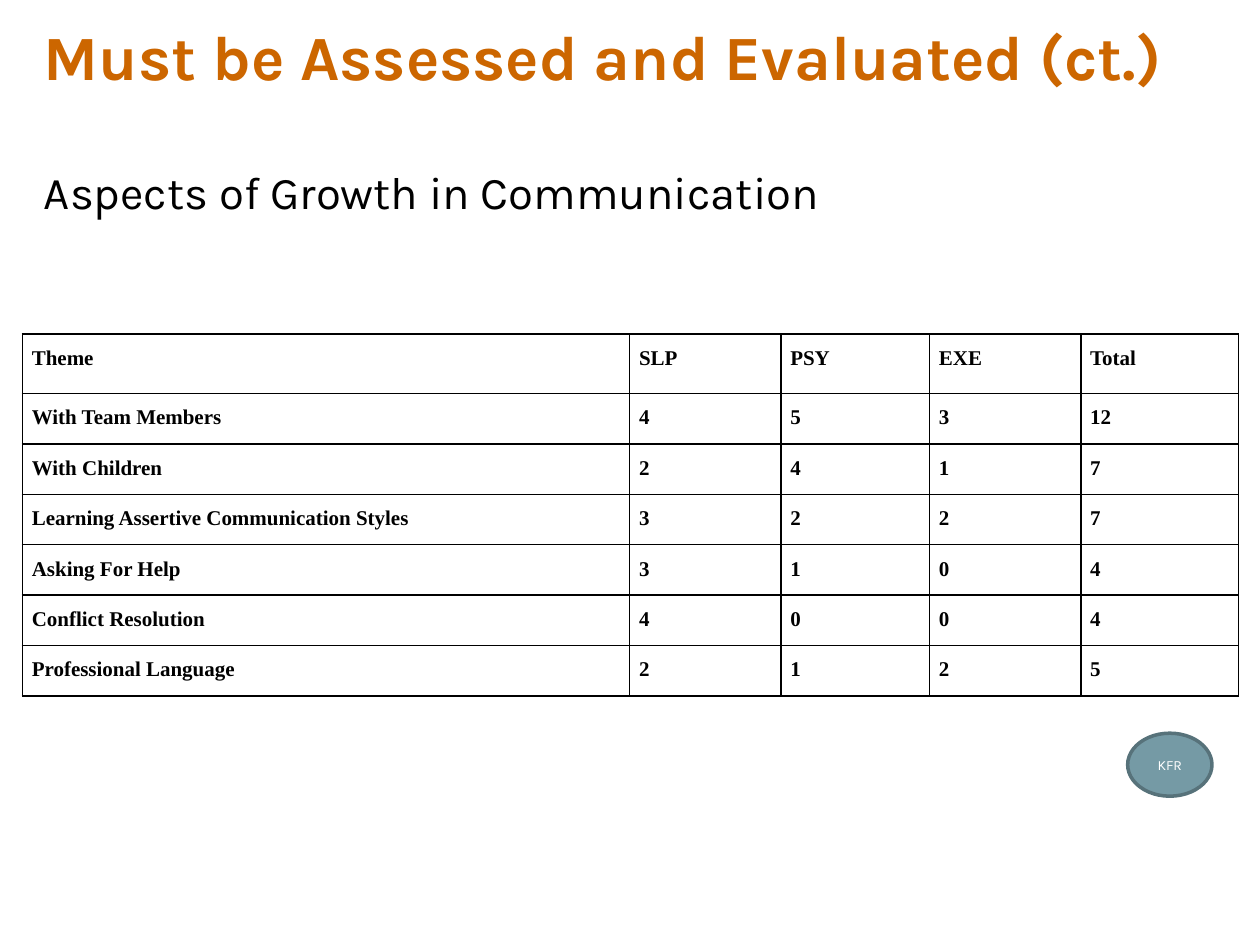
import pptx
import pptx.dml.color
import pptx.enum.shapes
import pptx.enum.text
import pptx.oxml
import pptx.oxml.ns
import pptx.util

Pt = pptx.util.Pt

COLORS = {
    "title": "CC6600",
    "text": "000000",
    "border": "000000",
    "badge": "759AA5",
    "badge_line": "57727A",
    "badge_text": "FFFFFF",
}

COLUMN_WIDTHS = [347, 86.4, 85, 86.4, 90]
HEADER_HEIGHT = 34
ROW_HEIGHT = 27.6

THEMES = [
    ("Theme", "SLP", "PSY", "EXE", "Total"),
    ("With Team Members", 4, 5, 3, 12),
    ("With Children", 2, 4, 1, 7),
    ("Learning Assertive Communication Styles", 3, 2, 2, 7),
    ("Asking For Help", 3, 1, 0, 4),
    ("Conflict Resolution", 4, 0, 0, 4),
    ("Professional Language", 2, 1, 2, 5),
]


def rgb(name):
    return pptx.dml.color.RGBColor.from_string(COLORS[name])


def write(frame, text, size, color, font="Karla", bold=False):
    frame.text = text
    for run in frame.paragraphs[0].runs:
        run.font.name = font
        run.font.size = Pt(size)
        run.font.bold = bold
        run.font.color.rgb = rgb(color)


def add_text(slide, text, left, top, width, height, size, color, inset, bold=False):
    frame = slide.shapes.add_textbox(Pt(left), Pt(top), Pt(width), Pt(height)).text_frame
    frame.word_wrap = True
    frame.margin_left = frame.margin_right = Pt(7.2)
    frame.margin_top = frame.margin_bottom = Pt(inset)
    write(frame, text, size, color, bold=bold)


def add_borders(cell):
    properties = cell._tc.get_or_add_tcPr()
    for position, side in enumerate(("lnL", "lnR", "lnT", "lnB")):
        border = pptx.oxml.parse_xml(
            f'<a:{side} {pptx.oxml.ns.nsdecls("a")} w="{Pt(1)}"><a:solidFill>'
            f'<a:srgbClr val="{COLORS["border"]}"/></a:solidFill></a:{side}>'
        )
        properties.insert(position, border)


def add_theme_table(slide, left, top):
    height = HEADER_HEIGHT + ROW_HEIGHT * (len(THEMES) - 1)
    themes = slide.shapes.add_table(
        len(THEMES), len(COLUMN_WIDTHS),
        Pt(left), Pt(top), Pt(sum(COLUMN_WIDTHS)), Pt(height),
    ).table
    themes.first_row = themes.horz_banding = False
    for column, width in zip(themes.columns, COLUMN_WIDTHS):
        column.width = Pt(width)
    for index, (row, entries) in enumerate(zip(themes.rows, THEMES)):
        row.height = Pt(ROW_HEIGHT if index else HEADER_HEIGHT)
        for cell, entry in zip(row.cells, entries):
            cell.fill.background()
            cell.margin_left = cell.margin_right = Pt(5.4)
            cell.margin_top = cell.margin_bottom = Pt(7.2)
            write(cell.text_frame, str(entry), 12, "text", "Times New Roman", True)
            add_borders(cell)


def add_badge(slide, text, left, top, width, height):
    badge = slide.shapes.add_shape(
        pptx.enum.shapes.MSO_SHAPE.OVAL, Pt(left), Pt(top), Pt(width), Pt(height)
    )
    badge.shadow.inherit = False
    badge.fill.solid()
    badge.fill.fore_color.rgb = rgb("badge")
    badge.line.color.rgb = rgb("badge_line")
    badge.line.width = Pt(2)
    write(badge.text_frame, text, 8, "badge_text")
    badge.text_frame.vertical_anchor = pptx.enum.text.MSO_ANCHOR.MIDDLE
    badge.text_frame.paragraphs[0].alignment = pptx.enum.text.PP_ALIGN.CENTER


def main():
    deck = pptx.Presentation()
    deck.slide_width, deck.slide_height = Pt(720), Pt(540)
    slide = deck.slides.add_slide(deck.slide_layouts[6])
    add_text(slide, "Must be Assessed and Evaluated (ct.)",
             18, 3, 672, 75, 36, "title", 7.2, bold=True)
    add_text(slide, "Aspects of Growth in Communication",
             18, 90, 672, 360, 26, "text", 3.6)
    add_theme_table(slide, 12.8, 190.8)
    add_badge(slide, "KFR", 644.4, 419, 48.2, 36)
    deck.save("out.pptx")


if __name__ == "__main__":
    main()
